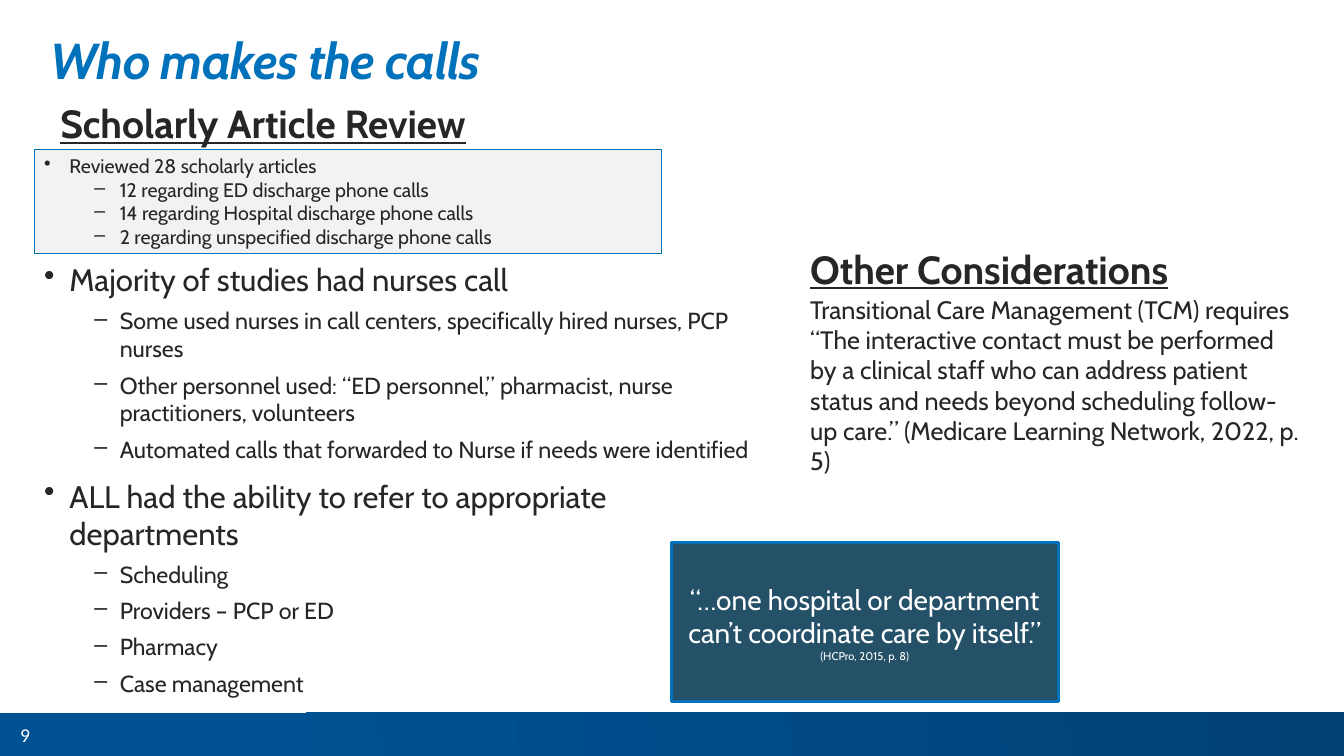
"""Build the slide on who makes discharge follow-up calls."""
from dataclasses import dataclass, field
from typing import Any, Optional

from lxml.etree import SubElement
from pptx import Presentation
from pptx.dml.color import RGBColor
from pptx.enum.shapes import MSO_SHAPE
from pptx.enum.text import MSO_ANCHOR, MSO_AUTO_SIZE, PP_ALIGN
from pptx.oxml.ns import qn
from pptx.util import Cm, Pt

COLORS = {
    "blue": "0072BC",
    "band_start": "005294",
    "band_end": "004175",
    "callout": "255168",
    "panel": "F2F2F2",
    "text": "262626",
    "white": "FFFFFF",
}
BULLETS = {0: ("•", 0.64), 1: ("–", 1.91)}
HANGING = 0.64
HEADING = {"bold": True, "underline": True}


@dataclass
class Line:
    text: str
    size: float
    level: Optional[int] = None
    before: float = 0
    color: str = "text"
    font: str = "Cabin"
    align: PP_ALIGN = PP_ALIGN.LEFT
    style: dict[str, Any] = field(default_factory=dict)


@dataclass
class Box:
    at: tuple[float, float, float, float]
    lines: list[Line]
    fill: Optional[str] = None
    border: float = 0
    frame: dict[str, Any] = field(default_factory=dict)


def rgb(name: str) -> RGBColor:
    return RGBColor.from_string(COLORS[name])


def set_all(target: Any, values: dict[str, Any]) -> None:
    for name, value in values.items():
        setattr(target, name, value)


def add_bullet(p: Any, level: int) -> None:
    char, indent = BULLETS[level]
    p.level = level
    pPr = p._p.get_or_add_pPr()
    pPr.set("marL", str(Cm(indent)))
    pPr.set("indent", str(-Cm(HANGING)))
    SubElement(pPr, qn("a:buChar")).set("char", char)


def write(tf: Any, lines: list[Line], frame: dict[str, Any]) -> None:
    set_all(tf, {"word_wrap": True, "auto_size": MSO_AUTO_SIZE.NONE,
                 "vertical_anchor": MSO_ANCHOR.TOP} | frame)
    for i, line in enumerate(lines):
        p = tf.add_paragraph() if i else tf.paragraphs[0]
        set_all(p, {"alignment": line.align, "space_before": Pt(line.before if i else 0)})
        if line.level is not None:
            add_bullet(p, line.level)
        r = p.add_run()
        r.text = line.text
        set_all(r.font, {"name": line.font, "size": Pt(line.size)} | line.style)
        r.font.color.rgb = rgb(line.color)


def add_box(s: Any, box: Box) -> None:
    at = [Cm(v) for v in box.at]
    if box.fill:
        sp = s.shapes.add_shape(MSO_SHAPE.RECTANGLE, *at)
        sp.shadow.inherit = False
        sp.fill.solid()
        sp.fill.fore_color.rgb = rgb(box.fill)
        sp.line.color.rgb = rgb("blue")
        sp.line.width = Pt(box.border)
    else:
        sp = s.shapes.add_textbox(*at)
    write(sp.text_frame, box.lines, box.frame)


def add_band(s: Any) -> None:
    sp = s.shapes.add_shape(MSO_SHAPE.RECTANGLE, 0, Cm(17.96), Cm(33.87), Cm(1.09))
    sp.shadow.inherit = False
    sp.line.fill.background()
    sp.fill.gradient()
    sp.fill.gradient_angle = 8
    stops = (("band_start", 0.18), ("band_end", 1))
    for stop, (color, position) in zip(sp.fill.gradient_stops, stops):
        stop.color.rgb = rgb(color)
        stop.position = position


def add_title(s: Any, text: str) -> None:
    sp = s.shapes.title
    set_all(sp, {"left": Cm(1.27), "top": Cm(0.97), "width": Cm(31.32), "height": Cm(1.37)})
    margins = {f"margin_{side}": 0 for side in ("left", "top", "right", "bottom")}
    style = {"bold": True, "italic": True}
    write(sp.text_frame, [Line(text, 36, color="blue", style=style)], margins)
    p = sp.text_frame.paragraphs[0]
    p.line_spacing = 0.85
    p.runs[0]._r.get_or_add_rPr().set("spc", "-50")


def topic(text: str) -> Line:
    return Line(text, 22.2, level=0, before=10)


def detail(text: str) -> Line:
    return Line(text, 16.6, level=1, before=6)


def heading(text: str) -> Line:
    return Line(text, 28, style=HEADING)


def centred(text: str, size: float, font: str = "Cabin") -> Line:
    return Line(text, size, color="white", font=font, align=PP_ALIGN.CENTER)


MIDDLE = {"vertical_anchor": MSO_ANCHOR.MIDDLE}
BOXES = [
    Box((0.86, 6.45, 18.9, 11.18), [
        topic("Majority of studies had nurses call"),
        detail("Some used nurses in call centers, specifically hired nurses, PCP nurses"),
        detail("Other personnel used: “ED personnel,” pharmacist, nurse practitioners, volunteers"),
        detail("Automated calls that forwarded to Nurse if needs were identified"),
        topic("ALL had the ability to refer to appropriate departments"),
        detail("Scheduling"),
        detail("Providers – PCP or ED"),
        detail("Pharmacy"),
        detail("Case management"),
    ]),
    Box((0, 17.96, 1.27, 1.09), [centred("9", 14, "Calibri")], frame=MIDDLE),
    Box((1.27, 2.39, 15.49, 1.32), [heading("Scholarly Article Review")]),
    Box((16.92, 13.67, 9.75, 4.01), [
        centred("“…one hospital or department can’t coordinate care by itself.”", 20),
        centred("(HCPro, 2015, p. 8)", 8),
    ], fill="callout", border=2, frame={"margin_top": Cm(1)}),
    Box((20.17, 7.29, 12.83, 4.11), [Line(
        "Transitional Care Management (TCM) requires “The interactive contact must be "
        "performed by a clinical staff who can address patient status and needs beyond "
        "scheduling follow-up care.” (Medicare Learning Network, 2022, p. 5)", 18)]),
    Box((20.17, 6.05, 12.42, 1.32), [heading("Other Considerations")]),
    Box((0.86, 3.76, 15.82, 2.62), [
        Line("Reviewed 28 scholarly articles", 14, level=0),
        Line("12 regarding ED discharge phone calls", 14, level=1),
        Line("14 regarding Hospital discharge phone calls", 14, level=1),
        Line("2 regarding unspecified discharge phone calls", 14, level=1),
    ], fill="panel", border=0.75, frame=MIDDLE),
]


def main() -> None:
    prs = Presentation()
    set_all(prs, {"slide_width": Cm(33.87), "slide_height": Cm(19.05)})
    s = prs.slides.add_slide(prs.slide_layouts[5])
    add_band(s)
    add_title(s, "Who makes the calls")
    for box in BOXES:
        add_box(s, box)
    prs.save("out.pptx")


if __name__ == "__main__":
    main()
